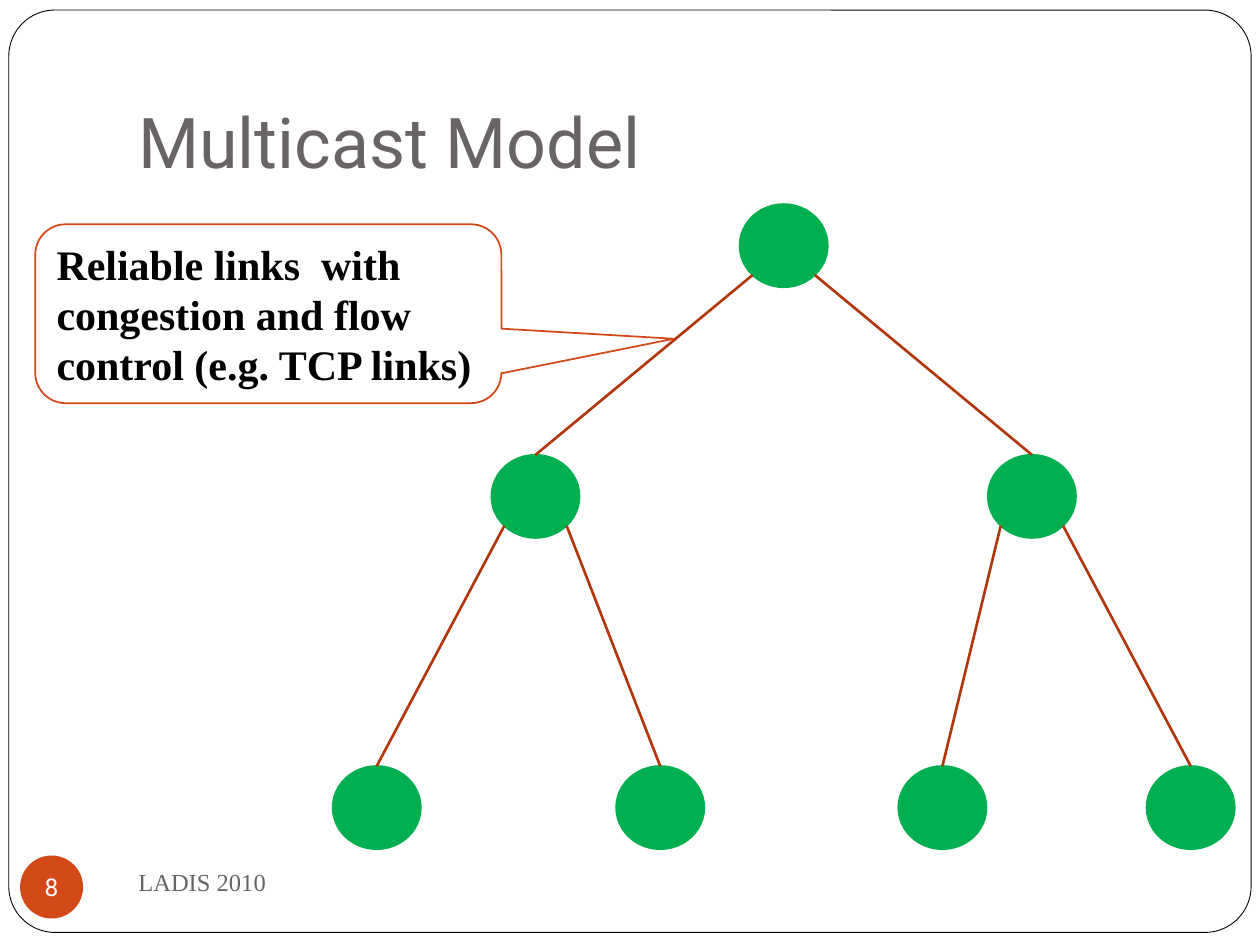
import math

import pptx
import pptx.dml.color
import pptx.enum.shapes
import pptx.enum.text
import pptx.oxml
import pptx.oxml.ns
import pptx.util

SHAPE = pptx.enum.shapes.MSO_SHAPE
ANCHOR = pptx.enum.text.MSO_ANCHOR
ALIGN = pptx.enum.text.PP_ALIGN

COLUMNS, ROWS = 10, 7.5
GREEN, ORANGE, RUST = "00B050", "D34817", "B1360B"
GREY, BLACK, WHITE = "696464", "000000", "FFFFFF"
SANS, SERIF = "Roboto", "Times New Roman"


def color(value):
    return pptx.dml.color.RGBColor.from_string(value)


class Deck:
    """Holds the presentation, its current slide and the tree's style."""

    node_w, node_h = 0.7, 0.66

    def __init__(self):
        self.prs = pptx.Presentation()
        self.prs.slide_width = pptx.util.Inches(10)
        self.prs.slide_height = pptx.util.Inches(7.5)
        self.s = self.prs.slides.add_slide(self.prs.slide_layouts[6])

    def place(self, *lengths):
        """Turn alternating columns and rows into slide lengths."""
        units = (self.prs.slide_width / COLUMNS, self.prs.slide_height / ROWS)
        return [round(n * units[i % 2]) for i, n in enumerate(lengths)]

    def shape(self, kind, box, fill, line=None, width=1, adjust=()):
        sp = self.s.shapes.add_shape(kind, *self.place(*box))
        sp.shadow.inherit = False
        sp.fill.solid()
        sp.fill.fore_color.rgb = color(fill)
        if line:
            sp.line.color.rgb = color(line)
            sp.line.width = pptx.util.Pt(width)
        else:
            sp.line.fill.background()
        for i, value in enumerate(adjust):
            sp.adjustments[i] = value
        return sp

    def text_box(self, box, text, font, **frame):
        sp = self.s.shapes.add_textbox(*self.place(*box))
        self.label(sp, text, font, **frame)

    def label(self, sp, text, font, align=ALIGN.LEFT, **frame):
        """Fill a shape with one paragraph; frame holds text frame values."""
        tf = sp.text_frame
        values = {"word_wrap": True, "vertical_anchor": ANCHOR.MIDDLE, **frame}
        for name, value in values.items():
            setattr(tf, name, value)
        p = tf.paragraphs[0]
        p.alignment = align
        r = p.add_run()
        r.text = text
        values = dict(font)
        r.font.color.rgb = color(values.pop("color"))
        r.font.size = pptx.util.Pt(values.pop("size"))
        for name, value in values.items():
            setattr(r.font, name, value)

    def node(self, center):
        x, y = center
        box = (x - self.node_w / 2, y - self.node_h / 2, self.node_w, self.node_h)
        self.shape(SHAPE.OVAL, box, GREEN, GREEN)

    def link(self, parent, child):
        """Join the parent's lower diagonal point to the child's top."""
        side = math.copysign(math.sqrt(0.5), child[0] - parent[0])
        start = (parent[0] + side * self.node_w / 2,
                 parent[1] + math.sqrt(0.5) * self.node_h / 2)
        end = (child[0], child[1] - self.node_h / 2)
        line = self.s.shapes.add_connector(
            pptx.enum.shapes.MSO_CONNECTOR.STRAIGHT, *self.place(*start, *end))
        line.line.color.rgb = color(RUST)
        line.line.width = pptx.util.Pt(1.5)
        line._element.spPr.append(pptx.oxml.parse_xml(
            f"<a:effectLst {pptx.oxml.ns.nsdecls('a')}/>"))

    def tree(self, levels):
        """Draw a binary tree from (row, columns) levels, root first."""
        nodes = [[(x, y) for x in xs] for y, xs in levels]
        for level in nodes:
            for center in level:
                self.node(center)
        for parents, children in zip(nodes, nodes[1:]):
            for i, child in enumerate(children):
                self.link(parents[i // 2], child)


def main():
    deck = Deck()
    deck.shape(SHAPE.ROUNDED_RECTANGLE, (0.07, 0.08, 9.86, 7.32), WHITE,
               BLACK, 0.5, [0.05])
    deck.text_box((1, 0.3, 8.5, 1.25), "Multicast Model",
                  {"name": SANS, "size": 40, "color": GREY},
                  vertical_anchor=ANCHOR.BOTTOM,
                  margin_bottom=pptx.util.Inches(0.1))

    badge = deck.shape(SHAPE.OVAL, (0.16, 6.79, 0.5, 0.5), ORANGE)
    margins = dict.fromkeys(
        ["margin_left", "margin_top", "margin_right", "margin_bottom"], 0)
    deck.label(badge, "8", {"name": SANS, "size": 14, "color": WHITE},
               ALIGN.CENTER, word_wrap=False, **margins)

    deck.tree([
        (1.95, [6.22]),
        (3.94, [4.25, 8.19]),
        (6.41, [2.99, 5.24, 7.48, 9.45]),
    ])

    callout = deck.shape(SHAPE.ROUNDED_RECTANGULAR_CALLOUT,
                         (0.28, 1.78, 3.7, 1.42), WHITE, ORANGE,
                         adjust=[0.87, 0.14, 0.17])
    deck.label(callout,
               "Reliable links  with congestion and flow control (e.g. TCP links)",
               {"name": SERIF, "size": 24, "color": BLACK, "bold": True})
    deck.text_box((1, 6.75, 4.33, 0.5), "LADIS 2010",
                  {"name": SERIF, "size": 14, "color": GREY})
    deck.prs.save("out.pptx")


if __name__ == "__main__":
    main()
